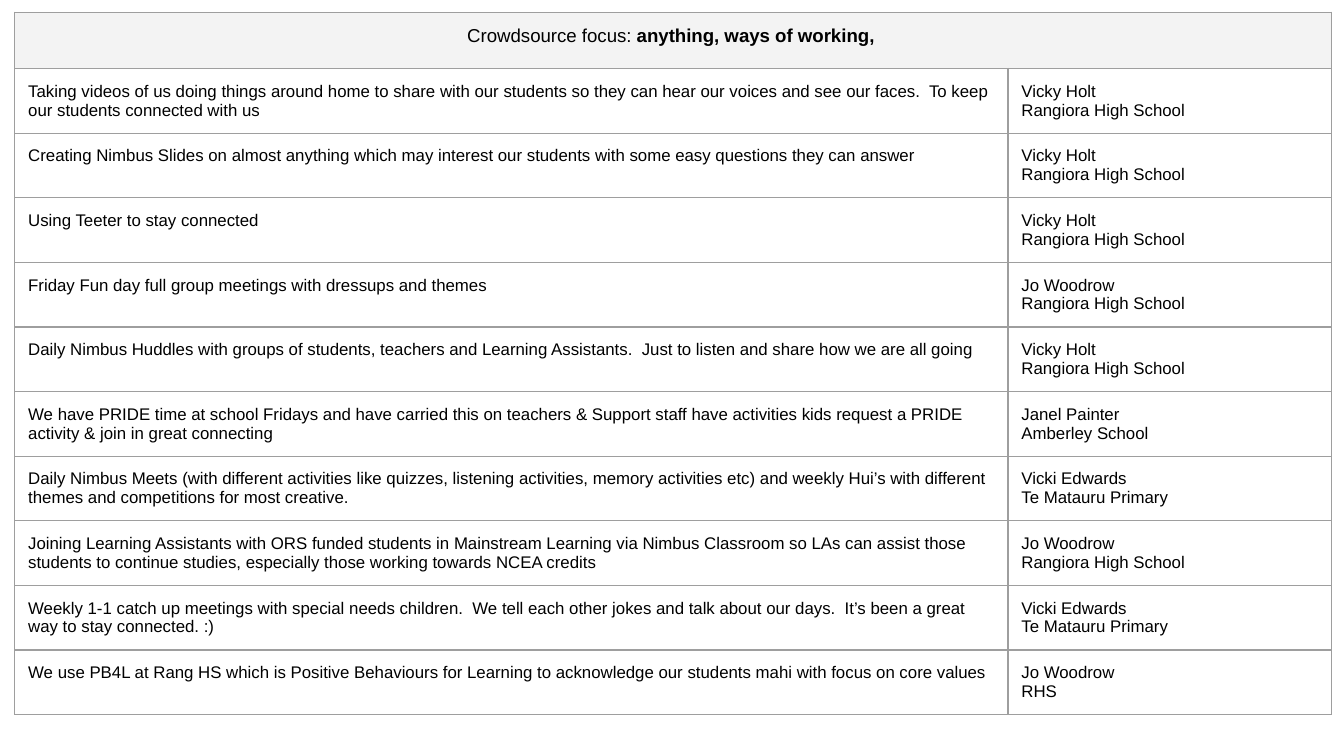
from lxml import etree
from pptx import Presentation
from pptx.dml.color import RGBColor
from pptx.enum.text import PP_ALIGN
from pptx.oxml.ns import qn
from pptx.util import Inches, Pt

CENTER, LEFT = PP_ALIGN.CENTER, PP_ALIGN.LEFT
COLORS = {"text": "000000", "header": "F3F3F3", "border": "9E9E9E"}
SLIDE_WIDTH = 10
SLIDE_HEIGHT = SLIDE_WIDTH * 9 / 16
COLUMN_WIDTHS = (7.39, 2.41)
HEADER_HEIGHT, IDEA_HEIGHT = 0.42, 0.43

RANGIORA, AMBERLEY, TE_MATAURU = "Rangiora High School", "Amberley School", "Te Matauru Primary"
IDEAS = [
    ("Taking videos of us doing things around home to share with our students so they can "
     "hear our voices and see our faces.  To keep our students connected with us",
     "Vicky Holt", RANGIORA),
    ("Creating Nimbus Slides on almost anything which may interest our students with some "
     "easy questions they can answer", "Vicky Holt", RANGIORA),
    ("Using Teeter to stay connected", "Vicky Holt", RANGIORA),
    ("Friday Fun day full group meetings with dressups and themes", "Jo Woodrow", RANGIORA),
    ("Daily Nimbus Huddles with groups of students, teachers and Learning Assistants.  "
     "Just to listen and share how we are all going", "Vicky Holt", RANGIORA),
    ("We have PRIDE time at school Fridays and have carried this on teachers & Support staff "
     "have activities kids request a PRIDE activity & join in great connecting",
     "Janel Painter", AMBERLEY),
    ("Daily Nimbus Meets (with different activities like quizzes, listening activities, memory "
     "activities etc) and weekly Hui’s with different themes and competitions for most creative.",
     "Vicki Edwards", TE_MATAURU),
    ("Joining Learning Assistants with ORS funded students in Mainstream Learning via Nimbus "
     "Classroom so LAs can assist those students to continue studies, especially those working "
     "towards NCEA credits", "Jo Woodrow", RANGIORA),
    ("Weekly 1-1 catch up meetings with special needs children.  We tell each other jokes and "
     "talk about our days.  It’s been a great way to stay connected. :)",
     "Vicki Edwards", TE_MATAURU),
    ("We use PB4L at Rang HS which is Positive Behaviours for Learning to acknowledge our "
     "students mahi with focus on core values", "Jo Woodrow", "RHS"),
]


def add_run(paragraph, text, size=9, bold=False, color="text", font="Arial"):
    run = paragraph.add_run()
    run.text = text
    run.font.name, run.font.size, run.font.bold = font, Pt(size), bold
    run.font.color.rgb = RGBColor.from_string(COLORS[color])


class TableSlide:
    def __init__(self, slide, border="border", border_width=0.75, inset=0.1):
        self.slide = slide
        self.border = COLORS[border]
        self.border_width = Pt(border_width)
        self.inset = Inches(inset)

    def add_table(self, left, top, widths, heights):
        table = self.slide.shapes.add_table(
            len(heights), len(widths), Inches(left), Inches(top),
            Inches(sum(widths)), Inches(sum(heights))).table
        table.first_row = table.horz_banding = False
        for column, width in zip(table.columns, widths):
            column.width = Inches(width)
        for row, height in zip(table.rows, heights):
            row.height = Inches(height)
        for cell in table.iter_cells():
            self.style_cell(cell)
        return table

    def style_cell(self, cell):
        cell.margin_left = cell.margin_right = self.inset
        cell.margin_top = cell.margin_bottom = self.inset
        properties = cell._tc.get_or_add_tcPr()
        for side in ("lnL", "lnR", "lnT", "lnB"):
            line = etree.SubElement(properties, qn(f"a:{side}"), w=str(self.border_width))
            fill = etree.SubElement(line, qn("a:solidFill"))
            etree.SubElement(fill, qn("a:srgbClr"), val=self.border)
        cell.fill.background()

    def fill_cell(self, cell, paragraphs, align=LEFT):
        """Write paragraphs, each a list of (text, format) runs, into a cell."""
        frame = cell.text_frame
        for index, runs in enumerate(paragraphs):
            paragraph = frame.add_paragraph() if index else frame.paragraphs[0]
            paragraph.alignment = align
            for text, style in runs:
                add_run(paragraph, text, **style)


def main():
    deck = Presentation()
    deck.slide_width, deck.slide_height = Inches(SLIDE_WIDTH), Inches(SLIDE_HEIGHT)
    page = TableSlide(deck.slides.add_slide(deck.slide_layouts[6]))

    heights = [HEADER_HEIGHT] + [IDEA_HEIGHT] * len(IDEAS)
    table = page.add_table(0.11, 0.09, COLUMN_WIDTHS, heights)

    header = table.cell(0, 0)
    header.merge(table.cell(0, 1))
    header.fill.solid()
    header.fill.fore_color.rgb = RGBColor.from_string(COLORS["header"])
    page.fill_cell(header, [[("Crowdsource focus:", {"size": 10}),
                             (" anything, ways of working, ", {"size": 10, "bold": True})]],
                   align=CENTER)

    for row, (idea, teacher, school) in enumerate(IDEAS, start=1):
        page.fill_cell(table.cell(row, 0), [[(idea, {})]])
        page.fill_cell(table.cell(row, 1), [[(teacher, {})], [(school, {})]])

    deck.save("out.pptx")


if __name__ == "__main__":
    main()
